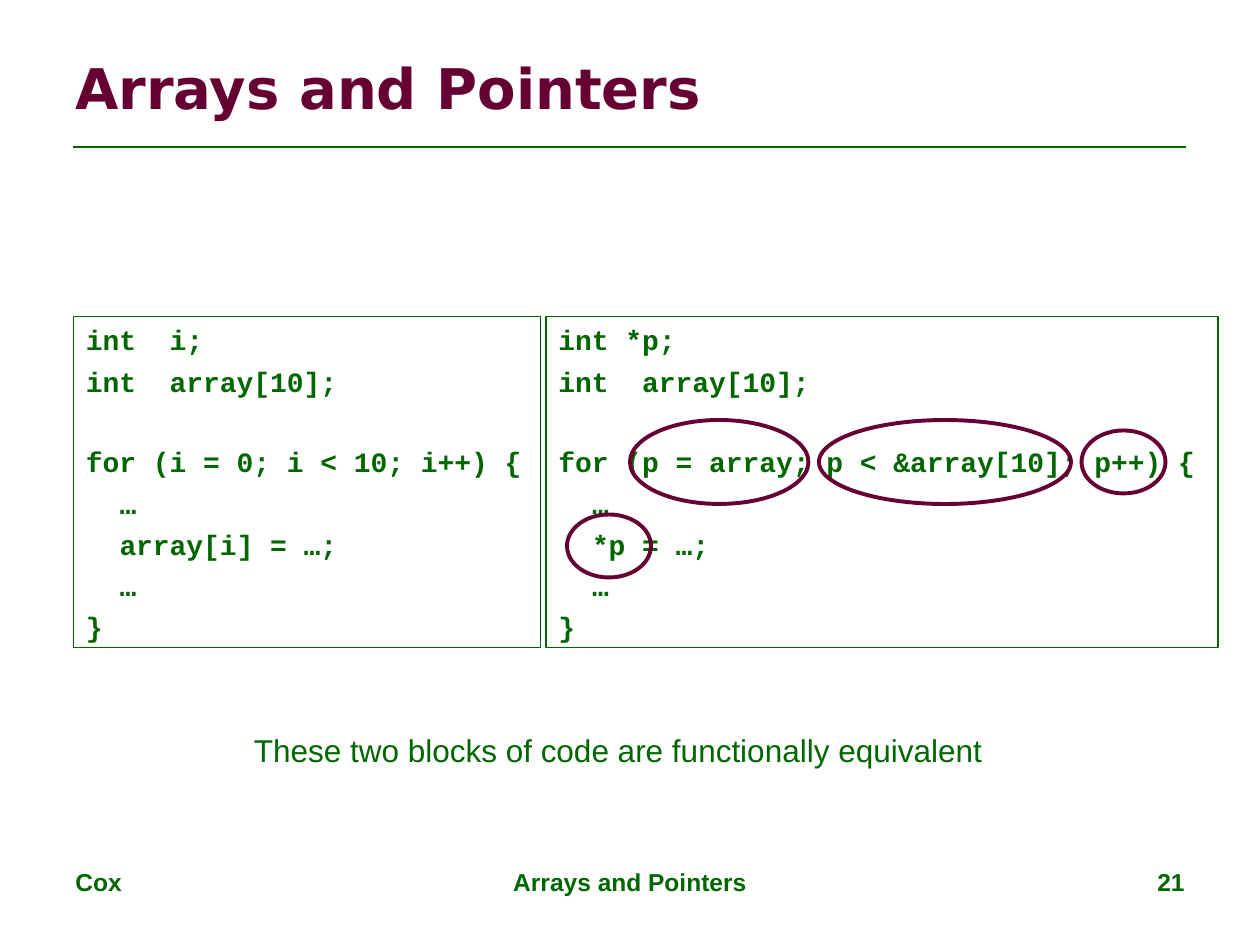
from pptx import Presentation
from pptx.dml.color import RGBColor
from pptx.enum.shapes import MSO_CONNECTOR as Connector, MSO_SHAPE as Shape
from pptx.enum.text import MSO_ANCHOR as Anchor, PP_ALIGN as Align
from pptx.oxml.ns import qn
from pptx.util import Pt
from lxml.etree import SubElement

COLORS = {"green": "006600", "maroon": "660033"}

TITLE = ("Arrays and Pointers", (36, 21.6, 648, 56))
CAPTION = ("These two blocks of code are functionally equivalent", (138, 414, 431, 29))
FOOTERS = [
    ("Cox", 36, 168, Align.LEFT),
    ("Arrays and Pointers", 246, 228, Align.CENTER),
    ("21", 516, 168, Align.RIGHT),
]

# Each code line: blank lines above, indent level, text
CODE_BLOCKS = [
    (42, 267, [
        (0, 0, "int  i;"),
        (0, 0, "int  array[10];"),
        (1, 0, "for (i = 0; i < 10; i++) {"),
        (0, 1, "…"),
        (0, 1, "array[i] = …;"),
        (0, 1, "…"),
        (0, 0, "}"),
    ]),
    (312, 384, [
        (0, 0, "int *p;"),
        (0, 0, "int  array[10];"),
        (1, 0, "for (p = array; p < &array[10]; p++) {"),
        (0, 1, "…"),
        (0, 1, "*p = …;"),
        (0, 1, "…"),
        (0, 0, "}"),
    ]),
]
CODE_TOP, CODE_HEIGHT = 181, 189
LINE_GAP, LINE_PITCH, INDENT = 4.4, 22.5, 19.2

HIGHLIGHTS = [
    (360, 240, 102, 48),
    (468, 240, 144, 48),
    (618, 246, 48, 36),
    (324, 294, 48, 36),
]


def color(name):
    return RGBColor.from_string(COLORS[name])


def style(paragraph, face, size, ink="green", bold=True):
    font = paragraph.font
    font.name, font.size, font.bold = face, Pt(size), bold
    font.color.rgb = color(ink)


def add_label(slide, words, box, face, size, ink="green", bold=True,
              align=Align.LEFT, anchor=Anchor.TOP, wrap=True):
    frame = slide.shapes.add_textbox(*map(Pt, box)).text_frame
    frame.word_wrap = wrap
    frame.vertical_anchor = anchor
    paragraph = frame.paragraphs[0]
    paragraph.text = words
    paragraph.alignment = align
    style(paragraph, face, size, ink, bold)


def add_outline(slide, kind, box, ink, weight):
    outline = slide.shapes.add_shape(kind, *map(Pt, box))
    outline.shadow.inherit = False
    outline.fill.background()
    outline.line.color.rgb = color(ink)
    outline.line.width = Pt(weight)
    return outline


def add_code(slide, left, width, lines):
    box = (left, CODE_TOP, width, CODE_HEIGHT)
    frame = add_outline(slide, Shape.RECTANGLE, box, "green", 0.75).text_frame
    frame.word_wrap = True
    frame.vertical_anchor = Anchor.TOP
    for number, (blanks, level, code) in enumerate(lines):
        paragraph = frame.add_paragraph() if number else frame.paragraphs[0]
        paragraph.text = code
        paragraph.alignment = Align.LEFT
        paragraph.space_before = Pt(LINE_GAP + blanks * LINE_PITCH)
        style(paragraph, "Courier New", 16)
        paragraph._p.get_or_add_pPr().set("marL", str(Pt(level * INDENT)))


def main():
    deck = Presentation()
    deck.slide_width, deck.slide_height = Pt(720), Pt(540)
    slide = deck.slides.add_slide(deck.slide_layouts[6])

    rule = slide.shapes.add_connector(Connector.STRAIGHT, Pt(42), Pt(84), Pt(678), Pt(84))
    rule.line.color.rgb = color("green")
    rule.line.width = Pt(1.5)
    SubElement(rule._element.spPr, qn("a:effectLst"))

    for words, left, width, align in FOOTERS:
        add_label(slide, words, (left, 492, width, 37.5), "Arial", 14, align=align)
    add_label(slide, *TITLE, "DejaVu Sans", 32, ink="maroon", anchor=Anchor.MIDDLE)
    for block in CODE_BLOCKS:
        add_code(slide, *block)
    for box in HIGHLIGHTS:
        add_outline(slide, Shape.OVAL, box, "maroon", 2.25)
    add_label(slide, *CAPTION, "Arial", 18, bold=False, wrap=False)

    deck.save("out.pptx")


if __name__ == "__main__":
    main()
